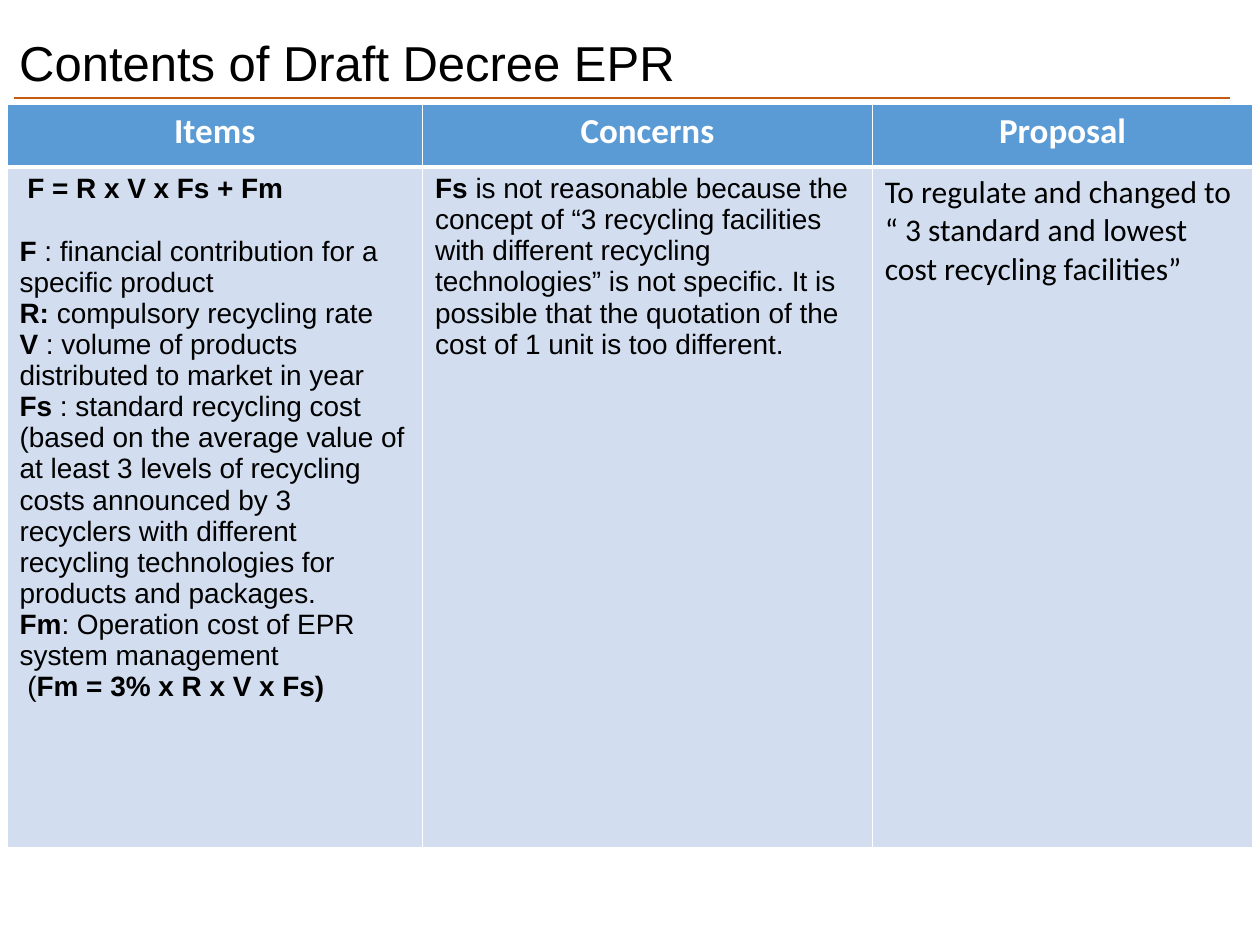
from lxml.etree import SubElement
from pptx import Presentation
from pptx.dml.color import RGBColor
from pptx.enum.shapes import MSO_CONNECTOR
from pptx.enum.text import MSO_ANCHOR, PP_ALIGN
from pptx.oxml.ns import qn
from pptx.util import Pt

TITLE = "Contents of Draft Decree EPR"
HEADERS = ["Items", "Concerns", "Proposal"]
ITEMS = [
    [(" ", False), ("F = R x V x Fs + Fm", True)],
    [("F ", True), (": financial contribution for a specific product", False)],
    [("R: ", True), ("compulsory recycling rate", False)],
    [("V ", True), (": volume of products distributed to market in year", False)],
    [("Fs ", True), (": standard recycling cost (based on the average value of at least "
                     "3 levels of recycling costs announced by 3 recyclers with different "
                     "recycling technologies for products and packages.", False)],
    [("Fm", True), (": Operation cost of EPR system management", False)],
    [(" (", False), ("Fm = 3% x R x V x Fs)", True)],
]
CONCERNS = [
    [("Fs", True), (" is not reasonable because the concept of “3 recycling facilities with "
                    "different recycling technologies” is not specific. It is possible that "
                    "the quotation of the cost of 1 unit is too different.", False)],
]
PROPOSAL = [
    [("To regulate and changed to", False)],
    [("“ 3 standard and lowest cost recycling facilities”", False)],
]
BODY = [(ITEMS, "Arial", 16), (CONCERNS, "Arial", 16), (PROPOSAL, "Calibri", 18)]
COLUMN_WIDTHS = [237.5, 257, 217.5]
ROW_HEIGHTS = [36, 389]
WHITE, BLACK, BLUE, PALE_BLUE, ORANGE = "FFFFFF", "000000", "5B9BD5", "D2DEEF", "C55A11"


def color(value):
    """Turn a hex string into a colour."""
    return RGBColor.from_string(value)


def add_run(paragraph, text, font_name, size, font_color, bold=False):
    """Add one formatted run to a paragraph."""
    run = paragraph.add_run()
    run.text = text
    run.font.name = font_name
    run.font.size = Pt(size)
    run.font.bold = bold
    run.font.color.rgb = color(font_color)


def fill_cell(cell, paragraphs, font_name, size, font_color, alignment):
    """Write paragraphs of (text, bold) runs into a cell."""
    for index, runs in enumerate(paragraphs):
        frame = cell.text_frame
        paragraph = frame.add_paragraph() if index else frame.paragraphs[0]
        paragraph.alignment = alignment
        for text, bold in runs:
            add_run(paragraph, text, font_name, size, font_color, bold)


def style_cell(cell, fill, top_width, bottom_width):
    """Give a cell its white borders and fill."""
    properties = cell._tc.get_or_add_tcPr()
    for side, width in (("L", 1), ("R", 1), ("T", top_width), ("B", bottom_width)):
        line = SubElement(properties, qn(f"a:ln{side}"), w=str(Pt(width)))
        SubElement(SubElement(line, qn("a:solidFill")), qn("a:srgbClr"), val=WHITE)
    cell.fill.solid()
    cell.fill.fore_color.rgb = color(fill)


def add_title(slide):
    """Place the title above the rule."""
    title = slide.shapes.title
    title.left, title.top, title.width, title.height = Pt(-5), Pt(10), Pt(402.5), Pt(46)
    frame = title.text_frame
    frame.word_wrap = True
    frame.margin_left, frame.margin_right = Pt(16), Pt(0)
    frame.vertical_anchor = MSO_ANCHOR.BOTTOM
    frame.paragraphs[0].alignment = PP_ALIGN.LEFT
    add_run(frame.paragraphs[0], TITLE, "Arial", 28, BLACK)


def add_rule(slide):
    """Draw the rule under the title."""
    rule = slide.shapes.add_connector(MSO_CONNECTOR.STRAIGHT, Pt(8), Pt(56), Pt(703), Pt(56))
    rule.line.color.rgb = color(ORANGE)
    rule.line.width = Pt(1.5)
    SubElement(rule._element.spPr, qn("a:effectLst"))


def add_decree_table(slide):
    """Build the table of items, concerns and proposal."""
    table = slide.shapes.add_table(2, len(HEADERS), Pt(4), Pt(59.5),
                                   Pt(sum(COLUMN_WIDTHS)), Pt(sum(ROW_HEIGHTS))).table
    for row, height in zip(table.rows, ROW_HEIGHTS):
        row.height = Pt(height)
    for index, (width, header, (paragraphs, font_name, size)) in enumerate(
            zip(COLUMN_WIDTHS, HEADERS, BODY)):
        table.columns[index].width = Pt(width)
        head, body = table.cell(0, index), table.cell(1, index)
        fill_cell(head, [[(header, True)]], "Calibri", 20, WHITE, PP_ALIGN.CENTER)
        fill_cell(body, paragraphs, font_name, size, BLACK, PP_ALIGN.LEFT)
        style_cell(head, BLUE, 1, 3)
        style_cell(body, PALE_BLUE, 3, 1)
    table.cell(1, 0).text_frame.paragraphs[0].space_after = Pt(18)


def main():
    """Build and save the slide."""
    presentation = Presentation()
    presentation.slide_width, presentation.slide_height = Pt(720), Pt(540)
    slide = presentation.slides.add_slide(presentation.slide_layouts[5])
    add_rule(slide)
    add_decree_table(slide)
    add_title(slide)
    presentation.save("out.pptx")


if __name__ == "__main__":
    main()
